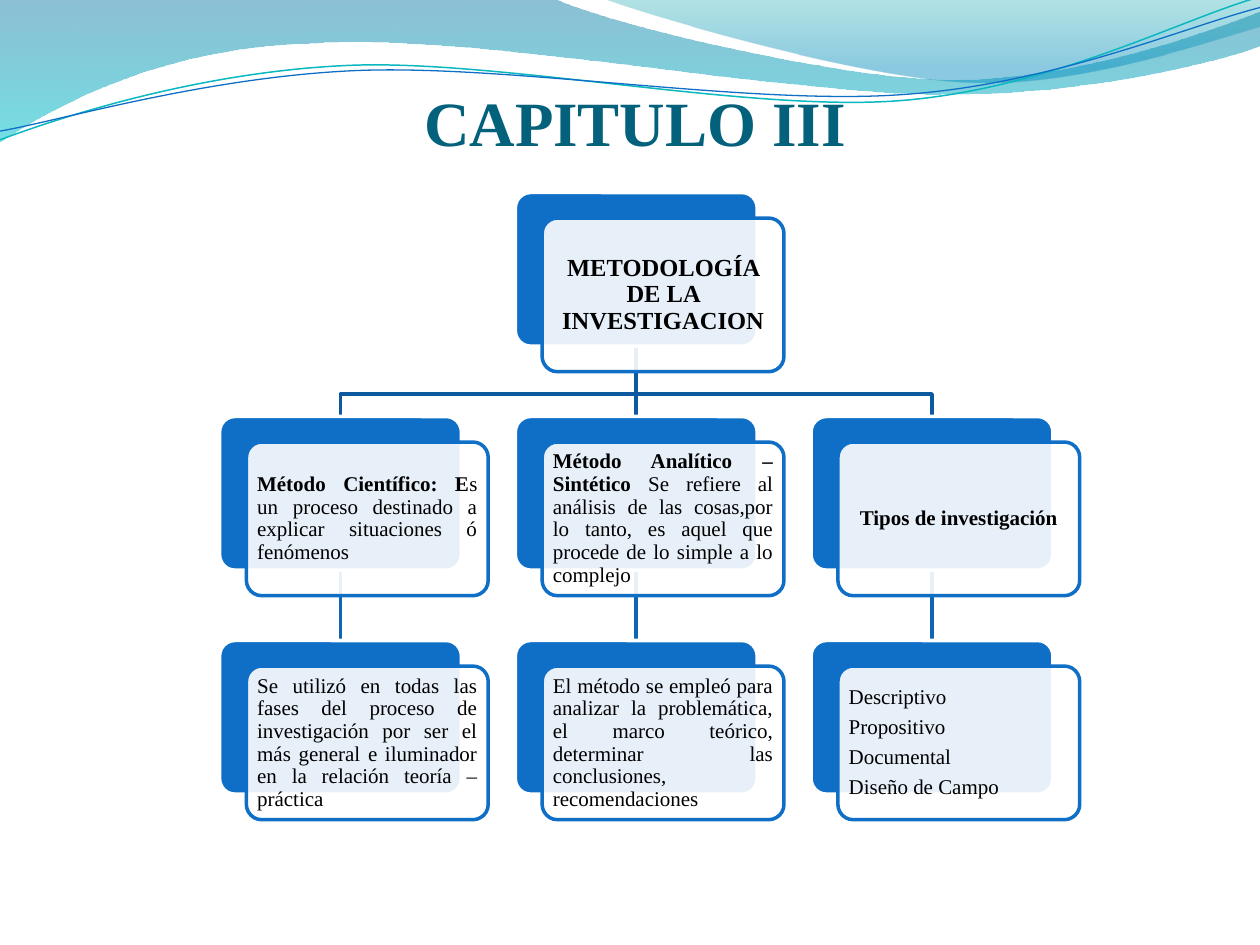
from lxml import etree
from pptx import Presentation
from pptx.dml.color import RGBColor
from pptx.enum.shapes import MSO_CONNECTOR as Connector, MSO_SHAPE as Shape
from pptx.enum.text import MSO_ANCHOR as Anchor, PP_ALIGN as Align
from pptx.oxml.ns import qn
from pptx.util import Pt

COLORS = {"blue": "0F6FC6", "teal": "0AB8BF", "trunk": "0C599F", "branch": "0E65B4",
          "title": "04617B", "white": "FFFFFF", "black": "000000",
          "wave top": "0074A1", "wave bottom": "00C6CF",
          "crest top": "00A1A9", "crest bottom": "008BBF"}
FONT = "Times New Roman"

# Each wave is a start point and steps: two numbers for a line, six for a Bézier curve.
# Gradient stops are position, colour, opacity.
FILLED_WAVES = [
    ((0, 0),
     [(316.8, -0.7), (342.7, 12.2, 478.1, 45.4, 545.8, 45.4),
      (614.2, 45.4, 689.8, 18.7, 720, 6.5), (720.7, 25.9),
      (707.8, 31.7, 626.4, 54.7, 537.1, 54), (447.8, 54, 275, 20.2, 185, 24.5),
      (92.9, 25.9, 33.1, 59.8, -0.7, 81.4), (0, 0)],
     [(0, "wave top", 45), (1, "wave bottom", 55)]),
    ((344.9, -0.7),
     [(366.5, 7.9, 491, 44.6, 553.7, 46.8), (616.3, 49.7, 691.9, 23, 720, 15.1),
      (720, 0), (344.9, -0.7)],
     [(0, "crest top", 30), (0.8, "crest bottom", 45)]),
]
LINE_WAVES = [
    ((0, 79.9),
     [(34.6, 67, 113.8, 41, 199.4, 37.4), (284.4, 33.8, 427, 64.1, 513.4, 57.6),
      (599.8, 51.1, 675.4, 10.8, 718.6, -1.4)], "teal", 0.85),
    ((0, 74.9),
     [(33.8, 69.1, 118.1, 43.9, 203.8, 40.3), (290.2, 36.7, 429.8, 60.5, 516.2, 54),
      (601.9, 48.2, 677.5, 15.1, 720, 4.3)], "blue", 0.75),
]

TITLE = "CAPITULO III"
# key, parent, column, row, alignment, paragraphs of (text, bold) runs
NODES = [
    ("root", None, 1, 0, Align.CENTER, [[("METODOLOGÍA DE LA INVESTIGACION", True)]]),
    ("scientific", "root", 0, 1, Align.JUSTIFY,
     [[("Método Científico: E", True),
       ("s un proceso destinado a explicar situaciones ó fenómenos", False)]]),
    ("scientific use", "scientific", 0, 2, Align.JUSTIFY,
     [[("Se utilizó en todas las fases del proceso de investigación por ser el más "
        "general e iluminador en la relación teoría – práctica", False)]]),
    ("analytic", "root", 1, 1, Align.JUSTIFY,
     [[("Método Analítico – Sintético ", True),
       ("Se refiere al análisis de las cosas,por lo tanto, es aquel que procede de lo "
        "simple a lo complejo", False)]]),
    ("analytic use", "analytic", 1, 2, Align.JUSTIFY,
     [[("El método se empleó para analizar la problemática, el marco teórico, "
        "determinar las conclusiones, recomendaciones", False)]]),
    ("types", "root", 2, 1, Align.CENTER, [[("Tipos de investigación", True)]]),
    ("type list", "types", 2, 2, Align.LEFT,
     [[(name, False)] for name in
      ("Descriptivo", "Propositivo", "Documental", "Diseño de Campo")]),
]

LEFT, TOP = 125.5, 110
COLUMN_STEP, ROW_STEP = 169, 128
CARD_WIDTH, CARD_HEIGHT = 138.2, 87.8
PANEL_DX, PANEL_DY = 15.3, 14.6
BEND = 27.4  # drop from a parent card to the horizontal branch


def rgb(name):
    return RGBColor.from_string(COLORS[name])


def set_opacity(color_parent, percent):
    color = next(color_parent.iter(qn("a:srgbClr")))
    etree.SubElement(color, qn("a:alpha")).set("val", str(percent * 1000))


def set_line(shape, color, width):
    shape.line.color.rgb = rgb(color)
    shape.line.width = Pt(width)


def add_outline(shapes, start, steps, close=False):
    """Draw a freeform, turning the six-number steps into Bézier curves."""
    builder = shapes.build_freeform(Pt(start[0]), Pt(start[1]))
    builder.add_line_segments([(Pt(step[-2]), Pt(step[-1])) for step in steps], close=close)
    shape = builder.convert_to_shape()
    shape.shadow.inherit = False
    segments = list(shape.element.iter(qn("a:lnTo")))
    for segment, step in zip(segments, steps):
        if len(step) == 6:
            curve = etree.Element(qn("a:cubicBezTo"))
            for x, y in zip(step[::2], step[1::2]):
                point = etree.SubElement(curve, qn("a:pt"))
                point.set("x", str(Pt(x) - shape.left))
                point.set("y", str(Pt(y) - shape.top))
            segment.getparent().replace(segment, curve)
    return shape


def add_open_outline(shapes, start, steps, color, width):
    shape = add_outline(shapes, start, steps)
    shape.fill.background()
    set_line(shape, color, width)
    return shape


def add_waves(shapes):
    for start, steps, stops in FILLED_WAVES:
        wave = add_outline(shapes, start, steps, close=True)
        wave.line.fill.background()
        wave.fill.gradient()
        wave.fill.gradient_angle = 270
        elements = wave.element.iter(qn("a:gs"))
        for stop, element, values in zip(wave.fill.gradient_stops, elements, stops):
            position, color, opacity = values
            stop.position = position
            stop.color.rgb = rgb(color)
            set_opacity(element, opacity)
    for wave in LINE_WAVES:
        add_open_outline(shapes, *wave)


def add_run(paragraph, text, size, bold, color="black"):
    run = paragraph.add_run()
    run.text = text
    run.font.name, run.font.size, run.font.bold = FONT, Pt(size), bold
    run.font.color.rgb = rgb(color)


def add_title(shapes):
    frame = shapes.add_textbox(Pt(144.7), Pt(20.9), Pt(442), Pt(90.7)).text_frame
    frame.word_wrap = True
    frame.vertical_anchor = Anchor.TOP
    frame.margin_left, frame.margin_right = 0, Pt(5.7)
    frame.margin_top, frame.margin_bottom = Pt(27), 0
    paragraph = frame.paragraphs[0]
    paragraph.alignment = Align.CENTER
    add_run(paragraph, TITLE, 36, True, "title")


def add_box(shapes, x, y, fill, line):
    box = shapes.add_shape(Shape.ROUNDED_RECTANGLE, Pt(x), Pt(y), Pt(CARD_WIDTH), Pt(CARD_HEIGHT))
    box.adjustments[0] = 0.1
    box.shadow.inherit = False
    box.fill.solid()
    box.fill.fore_color.rgb = rgb(fill)
    set_line(box, line, 2)
    return box


def fill_panel(panel, alignment, paragraphs, size):
    frame = panel.text_frame
    frame.word_wrap = True
    frame.vertical_anchor = Anchor.MIDDLE
    inset = Pt(size * 0.3)
    frame.margin_left = frame.margin_right = frame.margin_top = frame.margin_bottom = inset
    for index, runs in enumerate(paragraphs):
        paragraph = frame.add_paragraph() if index else frame.paragraphs[0]
        paragraph.alignment = alignment
        paragraph.line_spacing = 0.9
        paragraph.space_after = Pt(size * 0.35)
        for text, bold in runs:
            add_run(paragraph, text, size, bold)


def link_cards(shapes, parent, child, color):
    """Join two cards: straight within a column, bent between columns."""
    if parent.left == child.left:
        link = shapes.add_connector(Connector.STRAIGHT, 0, 0, 0, 0)
        link.begin_connect(parent, 2)
        link.end_connect(child, 0)
        set_line(link, color, 2)
        etree.SubElement(link.element.spPr, qn("a:effectLst"))
        return link
    x0, x1 = ((card.left + card.width / 2) / Pt(1) for card in (parent, child))
    y0, y1 = (parent.top + parent.height) / Pt(1), child.top / Pt(1)
    bends = [(x0, y0 + BEND), (x1, y0 + BEND), (x1, y1)]
    return add_open_outline(shapes, (x0, y0), bends, color, 2)


def add_tree(shapes):
    cards = {}
    for key, parent, column, row, alignment, paragraphs in NODES:
        x, y = LEFT + column * COLUMN_STEP, TOP + row * ROW_STEP
        cards[key] = add_box(shapes, x, y, "blue", "white")
        panel = add_box(shapes, x + PANEL_DX, y + PANEL_DY, "white", "blue")
        set_opacity(panel.element.spPr.find(qn("a:solidFill")), 90)
        fill_panel(panel, alignment, paragraphs, 12 if parent else 14)
        if parent:
            color = "trunk" if parent == "root" else "branch"
            link = link_cards(shapes, cards[parent], cards[key], color)
            cards["root"].element.addprevious(link.element)  # links lie behind all cards


def main():
    presentation = Presentation()
    presentation.slide_width, presentation.slide_height = Pt(720), Pt(540)
    slide = presentation.slides.add_slide(presentation.slide_layouts[6])
    add_waves(slide.shapes)
    add_title(slide.shapes)
    add_tree(slide.shapes)
    presentation.save("out.pptx")


if __name__ == "__main__":
    main()
